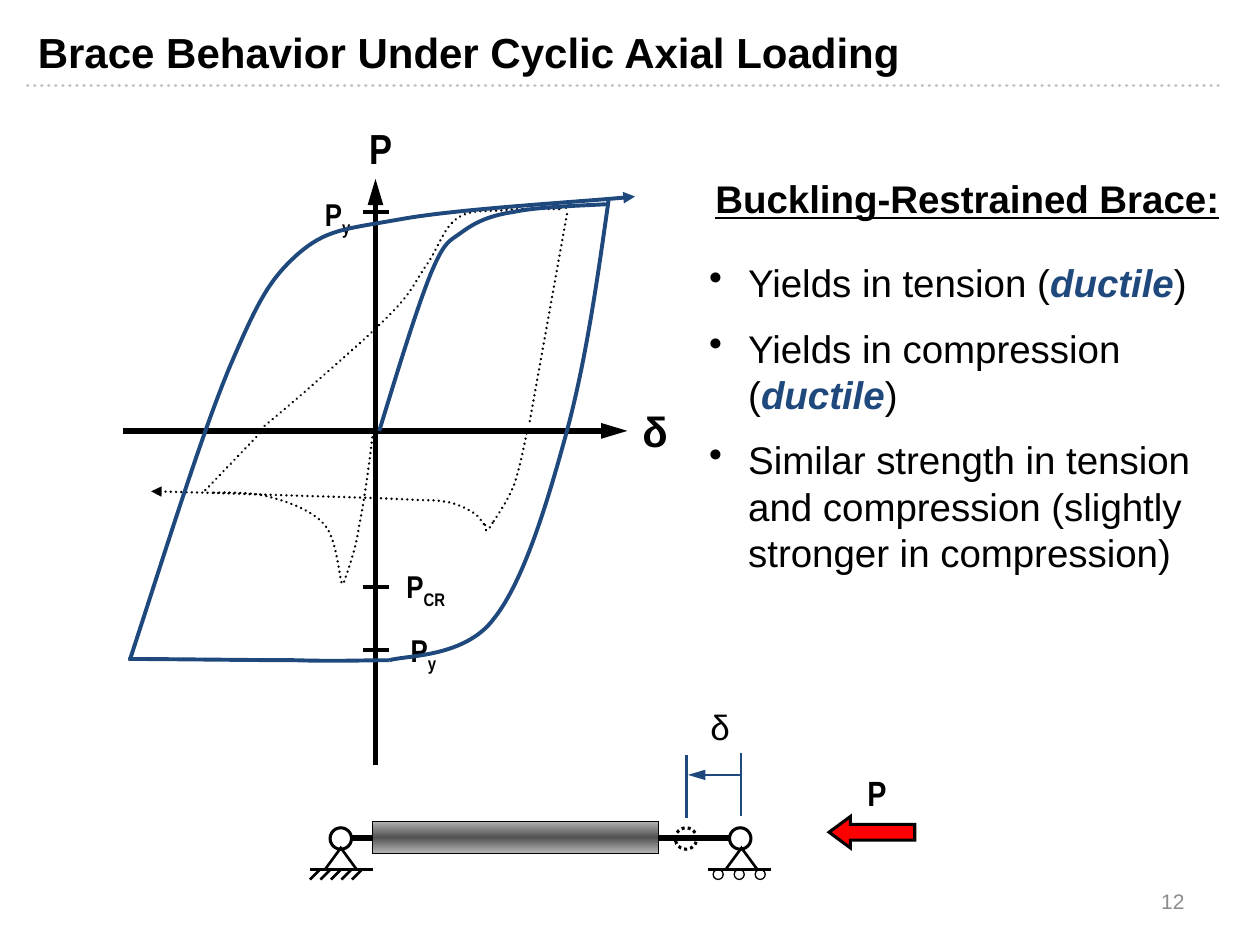
import copy

import pptx
import pptx.dml.color
import pptx.enum.dml
import pptx.enum.shapes
import pptx.enum.text
import pptx.oxml
import pptx.oxml.ns
import pptx.util

Inches = pptx.util.Inches
SHAPE = pptx.enum.shapes.MSO_SHAPE
ALIGN = pptx.enum.text.PP_ALIGN
ANCHOR = pptx.enum.text.MSO_ANCHOR
COLORS = {"ink": "000000", "blue": "1F497D", "red": "FF0000", "rule": "BFBFBF",
          "number": "8C8C8C", "steel": "B2B2B2", "dark": "525252"}
NARROW = "Arial Narrow"


def rgb(name):
    return pptx.dml.color.RGBColor.from_string(COLORS[name])


def element(tag, attributes=""):
    return pptx.oxml.parse_xml(f'<a:{tag} {pptx.oxml.ns.nsdecls("a")} {attributes}/>')


class Deck:
    """Draw styled elements on the current slide."""

    def __init__(self):
        self.prs = pptx.Presentation()
        self.prs.slide_width, self.prs.slide_height = Inches(10), Inches(7.5)
        self.s = self.prs.slides.add_slide(self.prs.slide_layouts[5])

    def stroke(self, sp, color, width, dotted=False, arrow=None, cap="rnd"):
        sp.line.color.rgb = rgb(color)
        sp.line.width = pptx.util.Pt(width)
        ln = sp.line._get_or_add_ln()
        if dotted:
            sp.line.dash_style = pptx.enum.dml.MSO_LINE.ROUND_DOT
            ln.set("cap", cap)
        if arrow:
            ln.append(element("tailEnd", f'type="triangle" w="med" len="{arrow}"'))

    def line(self, x1, y1, x2, y2, color="ink", width=1.5, dotted=False, arrow=None):
        sp = self.s.shapes.add_connector(pptx.enum.shapes.MSO_CONNECTOR.STRAIGHT,
                                         *map(Inches, (x1, y1, x2, y2)))
        self.stroke(sp, color, width, dotted, arrow)
        sp._element.spPr.append(element("effectLst"))

    def curve(self, points, color="ink", width=1.5, dotted=False, arrow=None):
        start, *rest = [tuple(map(Inches, pt)) for pt in points]
        builder = self.s.shapes.build_freeform(*start)
        builder.add_line_segments(rest, close=False)
        sp = builder.convert_to_shape()
        if len(rest) > 1:
            self.bend(sp)
        sp.shadow.inherit = False
        sp.fill.background()
        self.stroke(sp, color, width, dotted, arrow)

    def bend(self, sp):
        segments = sp._element.findall(".//" + pptx.oxml.ns.qn("a:lnTo"))
        for i in range(0, len(segments), 3):
            cubic = element("cubicBezTo")
            segments[i].addprevious(cubic)
            for segment in segments[i:i + 3]:
                cubic.append(segment[0])
                segment.getparent().remove(segment)

    def shape(self, kind, x, y, w, h, width, fill=None, dotted=False):
        sp = self.s.shapes.add_shape(kind, *map(Inches, (x, y, w, h)))
        sp.shadow.inherit = False
        if fill:
            sp.fill.solid()
            sp.fill.fore_color.rgb = rgb(fill)
        else:
            sp.fill.background()
        self.stroke(sp, "ink", width, dotted, cap="flat")
        sp.line._get_or_add_ln().append(element("miter", 'lim="800000"'))
        return sp

    def casing(self, x, y, w, h):
        sp = self.shape(SHAPE.RECTANGLE, x, y, w, h, 0.5)
        sp.fill.gradient()
        sp.fill.gradient_angle = 90
        edge, middle = sp.fill.gradient_stops
        edge.color.rgb, middle.color.rgb = rgb("steel"), rgb("dark")
        edge.position, middle.position = 0, 0.5
        last = copy.deepcopy(edge._gs)
        last.set("pos", "100000")
        middle._gs.addnext(last)

    def run(self, p, text, size, font="Arial", color="ink", bold=False, italic=False,
            underline=False, baseline=None):
        r = p.add_run()
        r.text = text
        f = r.font
        f.name, f.size, f.bold, f.italic = font, pptx.util.Pt(size), bold, italic
        f.underline = underline
        f.color.rgb = rgb(color)
        if baseline:
            r._r.get_or_add_rPr().set("baseline", str(baseline * 1000))

    def box(self, x, y, w, h, align=ALIGN.LEFT, anchor=ANCHOR.TOP):
        tf = self.s.shapes.add_textbox(*map(Inches, (x, y, w, h))).text_frame
        tf.word_wrap = True
        tf.vertical_anchor = anchor
        tf.paragraphs[0].alignment = align
        return tf

    def label(self, x, y, w, h, text, size, font=NARROW, bold=True, sub=None):
        p = self.box(x, y, w, h, ALIGN.CENTER).paragraphs[0]
        self.run(p, text, size, font, bold=bold)
        if sub:
            self.run(p, sub, size, font, bold=bold, baseline=-25)

    def title(self, x, y, w, h, text):
        sp = self.s.shapes.title
        sp.left, sp.top, sp.width, sp.height = map(Inches, (x, y, w, h))
        tf = sp.text_frame
        tf.vertical_anchor = ANCHOR.TOP
        tf.paragraphs[0].alignment = ALIGN.LEFT
        self.run(tf.paragraphs[0], text, 24, bold=True)

    def bullets(self, x, y, w, h, items):
        tf = self.box(x, y, w, h)
        for i, (before, strong, after) in enumerate(items):
            p = tf.add_paragraph() if i else tf.paragraphs[0]
            p.space_before = pptx.util.Pt(11 if i else 0)
            pPr = p._p.get_or_add_pPr()
            pPr.set("marL", str(Inches(0.31)))
            pPr.set("indent", str(Inches(-0.31)))
            pPr.append(element("buChar", 'char="•"'))
            self.run(p, before, 22)
            if strong:
                self.run(p, strong, 22, color="blue", bold=True, italic=True)
                self.run(p, after, 22)


def draw_hysteresis(deck):
    deck.line(2.98, 6.07, 2.98, 1.42, width=3, arrow="lg")
    deck.line(0.98, 3.42, 4.98, 3.42, width=3, arrow="lg")
    for y in (1.68, 4.66, 5.16):
        deck.line(2.88, y, 3.09, y, width=2.25)
    deck.label(2.73, 0.92, 0.58, 0.5, "P", 24)
    deck.label(4.91, 3.17, 0.58, 0.5, "δ", 24, "Arial")
    for x, y, sub in ((2.28, 1.5, "y"), (2.98, 4.45, "CR"), (2.96, 4.96, "y")):
        deck.label(x, y, 0.8, 0.4, "P", 18, sub=sub)
    deck.line(4.45, 1.65, 4.5, 1.65, dotted=True)
    buckling = [
        [(1.63, 3.89), (2.1, 3.4)],
        [(4.5, 1.7), (4.2, 3.37)],
        [(4.18, 3.44), (4.15, 3.59), (4.12, 3.73), (4.08, 3.85), (4.03, 3.97),
         (3.97, 4.06), (3.91, 4.15)],
        [(3.91, 4.15), (3.89, 4.18), (3.88, 4.21), (3.86, 4.21),
         (3.85, 4.21), (3.85, 4.16), (3.85, 4.16)],
        [(2.96, 3.43), (2.93, 3.7), (2.89, 3.98), (2.85, 4.18), (2.82, 4.38),
         (2.76, 4.53), (2.73, 4.62)],
        [(2.71, 4.62), (2.69, 4.55), (2.67, 4.28), (2.58, 4.17), (2.49, 4.06),
         (2.31, 3.99), (2.16, 3.95), (2.01, 3.9), (1.77, 3.91), (1.66, 3.91)],
        [(2.1, 3.38), (2.22, 3.28), (2.34, 3.18), (2.51, 3.03), (2.68, 2.88),
         (2.97, 2.63), (3.11, 2.48), (3.26, 2.33), (3.3, 2.23), (3.38, 2.11),
         (3.47, 1.99), (3.52, 1.81), (3.62, 1.74), (3.72, 1.66), (3.85, 1.68),
         (3.99, 1.67), (4.13, 1.65), (4.29, 1.66), (4.45, 1.66)],
        [(3.84, 4.16), (3.81, 4.12), (3.79, 4.08), (3.74, 4.06), (3.7, 4.03),
         (3.64, 4.01), (3.58, 3.99), (3.51, 3.98), (3.51, 3.97), (3.34, 3.97),
         (3.17, 3.96), (2.9, 3.95), (2.54, 3.94), (2.19, 3.93), (1.69, 3.91), (1.2, 3.9)]]
    restrained = [
        [(3.01, 3.42), (3.16, 2.93), (3.31, 2.44), (3.42, 2.17), (3.53, 1.91),
         (3.56, 1.92), (3.67, 1.84), (3.78, 1.76), (3.89, 1.71), (4.09, 1.68),
         (4.28, 1.64), (4.68, 1.63), (4.83, 1.62)],
        [(4.83, 1.59), (4.74, 2.23), (4.65, 2.86), (4.5, 3.42), (4.35, 3.97),
         (4.16, 4.61), (3.92, 4.91), (3.69, 5.22), (3.22, 5.2), (3.09, 5.24)],
        [(3.09, 5.24), (2.86, 5.24), (2.69, 5.25), (2.34, 5.24), (2, 5.24),
         (1.3, 5.23), (1.02, 5.23)],
        [(1.03, 5.24), (1.32, 4.35), (1.6, 3.45), (1.82, 2.92), (2.05, 2.38),
         (2.14, 2.22), (2.36, 2.02), (2.59, 1.82), (2.73, 1.82), (3.18, 1.74),
         (3.62, 1.66), (4.65, 1.6), (5.04, 1.56)]]
    for points in buckling:
        deck.curve(points, dotted=True, arrow="med" if points is buckling[-1] else None)
    for points in restrained:
        deck.curve(points, "blue", 2.25, arrow="med" if points is restrained[-1] else None)


def draw_brace(deck):
    deck.line(2.79, 6.65, 5.79, 6.65, width=3)
    for x, dotted in ((2.62, False), (5.79, False), (5.36, True)):
        deck.shape(SHAPE.OVAL, x, 6.57, 0.17, 0.17, 1.75, dotted=dotted)
    for pin, ground in ((2.58, 2.46), (5.76, 5.62)):
        deck.shape(SHAPE.ISOSCELES_TRIANGLE, pin, 6.73, 0.25, 0.17, 1.5)
        deck.line(ground, 6.9, ground + 0.5, 6.9)
    for i in range(5):
        x = 2.54 + i / 12
        deck.line(x, 6.9, x - 0.08, 6.98)
    for i in range(3):
        deck.shape(SHAPE.OVAL, 5.66 + i / 6, 6.9, 0.08, 0.08, 0.75)
    deck.casing(2.96, 6.52, 2.27, 0.25)
    for x, y in ((5.88, 5.98), (5.45, 5.99)):
        deck.line(x, y + 0.5, x, y, "blue")
    deck.line(5.87, 6.15, 5.46, 6.15, "blue", arrow="lg")
    deck.label(5.44, 5.55, 0.55, 0.43, "δ", 20, "Arial", bold=False)
    load = deck.shape(SHAPE.LEFT_ARROW, 6.58, 6.48, 0.68, 0.25, 1.75, "red")
    load.adjustments[0], load.adjustments[1] = 0.5, 0.68
    deck.label(6.58, 6.07, 0.76, 0.43, "P", 20)


def main():
    deck = Deck()
    deck.title(0.2, 0.16, 8.98, 0.44, "Brace Behavior Under Cyclic Axial Loading")
    deck.line(0.22, 0.68, 9.72, 0.68, "rule", 2, dotted=True)
    draw_hysteresis(deck)
    draw_brace(deck)
    heading = deck.box(5.58, 1.34, 4.3, 0.47).paragraphs[0]
    deck.run(heading, "Buckling-Restrained Brace:", 22, bold=True, underline=True)
    deck.bullets(5.53, 2.01, 4.35, 2.69, [
        ("Yields in tension (", "ductile", ")"),
        ("Yields in compression (", "ductile", ")"),
        ("Similar strength in tension and compression (slightly stronger in compression)",
         "", "")])
    number = deck.box(7.17, 6.95, 2.33, 0.4, ALIGN.RIGHT, ANCHOR.MIDDLE).paragraphs[0]
    deck.run(number, "12", 12, color="number")
    deck.prs.save("out.pptx")


if __name__ == "__main__":
    main()
